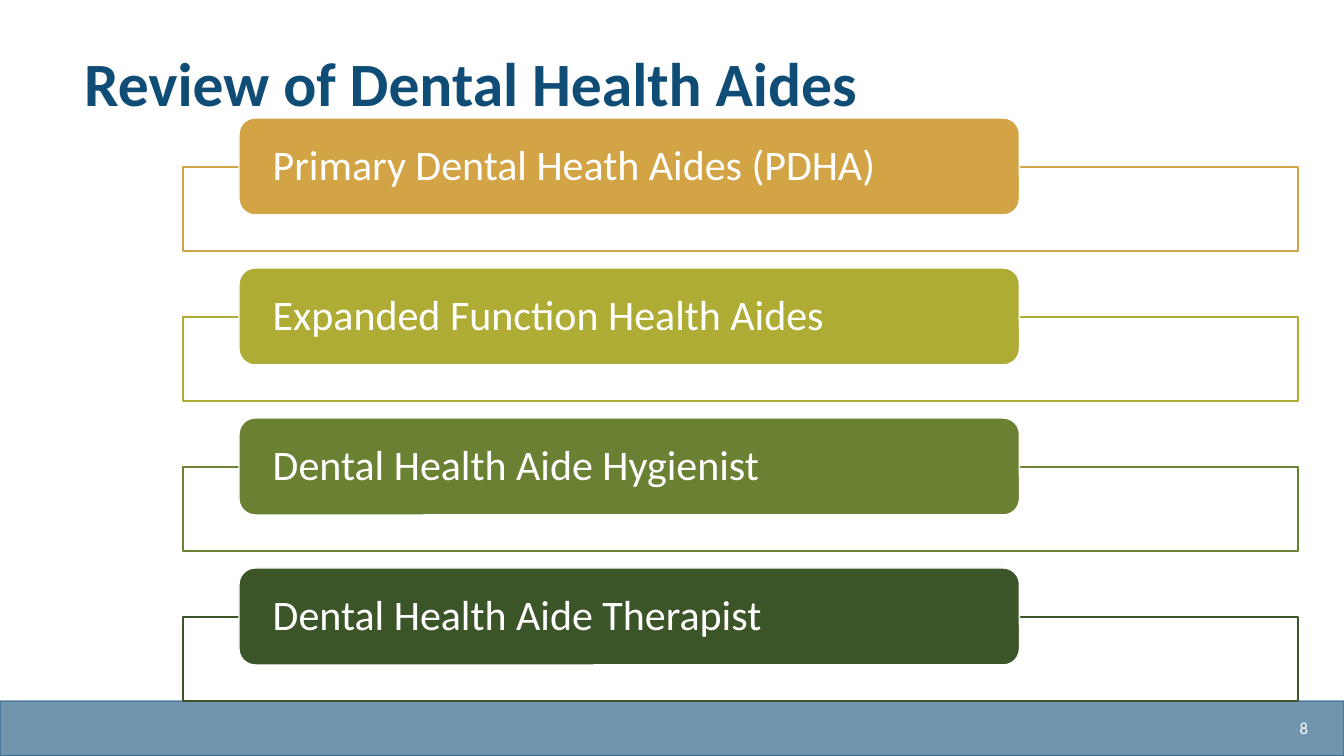
import pptx
import pptx.util
import pptx.dml.color
import pptx.enum.shapes
import pptx.enum.text
import pptx.oxml.ns
import lxml.etree

SLIDE_W, SLIDE_H = 1344, 756
EMU_PER_PX = 12192000 / SLIDE_W
FONT = "Calibri"
COLORS = {
    "navy": "0F4C76",
    "white": "FFFFFF",
    "gold": "D3A445",
    "lime": "AFAC36",
    "olive": "6A8032",
    "forest": "3B5529",
}
AIDES = [
    ("Primary Dental Heath Aides (PDHA)", "gold"),
    ("Expanded Function Health Aides", "lime"),
    ("Dental Health Aide Hygienist", "olive"),
    ("Dental Health Aide Therapist", "forest"),
]
SHAPES = pptx.enum.shapes.MSO_SHAPE
ALIGN = pptx.enum.text.PP_ALIGN
ANCHOR = pptx.enum.text.MSO_ANCHOR


def px(n):
    return pptx.util.Emu(round(n * EMU_PER_PX))


def rgb(name):
    return pptx.dml.color.RGBColor.from_string(COLORS[name])


def set_opacity(color_format_parent, percent):
    for clr in color_format_parent.iter(pptx.oxml.ns.qn("a:srgbClr")):
        alpha = lxml.etree.SubElement(clr, pptx.oxml.ns.qn("a:alpha"))
        alpha.set("val", str(percent * 1000))


def add_box(s, kind, box, fill, line):
    sp = s.shapes.add_shape(kind, *map(px, box))
    sp.shadow.inherit = False
    sp.fill.solid()
    sp.fill.fore_color.rgb = rgb(fill)
    sp.line.color.rgb = rgb(line)
    sp.line.width = pptx.util.Pt(1)
    return sp


def write(sp, text, size, color, align=ALIGN.LEFT, anchor=ANCHOR.MIDDLE,
          insets=(10, 5), bold=False, spacing=None):
    tf = sp.text_frame
    tf.word_wrap = True
    tf.vertical_anchor = anchor
    tf.margin_left = tf.margin_right = px(insets[0])
    tf.margin_top = tf.margin_bottom = px(insets[1])
    p = tf.paragraphs[0]
    p.alignment = align
    if spacing:
        p.line_spacing = spacing
    r = p.add_run()
    r.text = text
    r.font.name = FONT
    r.font.size = pptx.util.Pt(size)
    r.font.bold = bold
    r.font.color.rgb = rgb(color)


def add_footer(s, x, y, w, h):
    bar = add_box(s, SHAPES.RECTANGLE, (x, y, w, h), "navy", "navy")
    set_opacity(bar._element.spPr, 59)
    number = s.shapes.add_textbox(px(x + w - 170), px(y + 7), px(144), px(40))
    write(number, "8", 12, "white", align=ALIGN.RIGHT)


def add_title(s, x, y, w, h):
    title = s.shapes.add_textbox(px(x), px(y), px(w), px(h))
    write(title, "Review of Dental Health Aides", 44, "navy",
          anchor=ANCHOR.TOP, bold=True, spacing=0.9)


def add_aide_list(s, x, y, w, h):
    frame_h, label_h, overlap = 84, 97, 49
    pitch = (h - overlap - frame_h) / (len(AIDES) - 1)
    for i, (name, color) in enumerate(AIDES):
        top = y + i * pitch
        add_box(s, SHAPES.RECTANGLE, (x, top + overlap, w, frame_h), "white", color)
        label = add_box(s, SHAPES.ROUNDED_RECTANGLE,
                        (x + 56, top, w * 0.7, label_h), color, "white")
        write(label, name, 30, "white", insets=(29, 0), spacing=0.9)


def main():
    prs = pptx.Presentation()
    prs.slide_width, prs.slide_height = px(SLIDE_W), px(SLIDE_H)
    s = prs.slides.add_slide(prs.slide_layouts[6])
    add_footer(s, 0, 701, SLIDE_W, 55)
    add_title(s, 74, 48, 1064, 79)
    add_aide_list(s, 183, 118, 1115, 583)
    prs.save("out.pptx")


if __name__ == "__main__":
    main()
